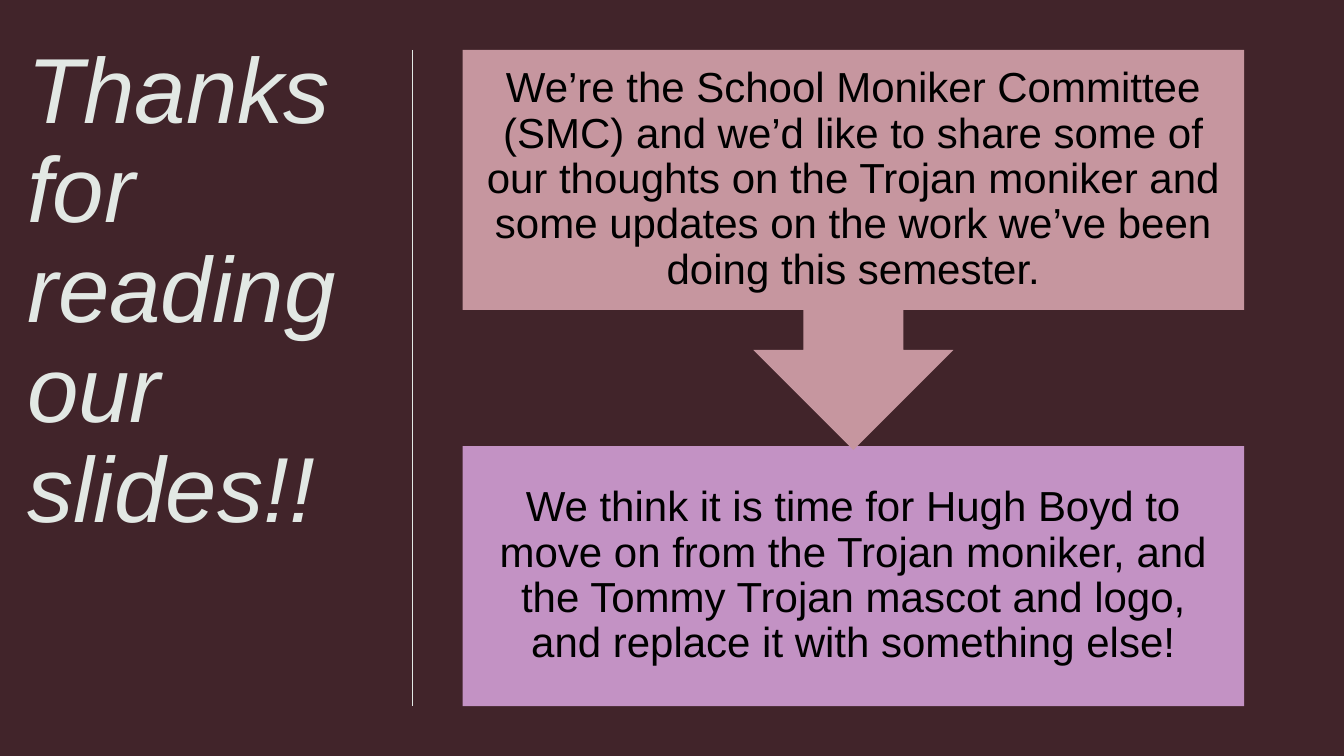
"""Build the closing slide of the School Moniker Committee deck."""
from lxml.etree import SubElement
from pptx import Presentation
from pptx.dml.color import RGBColor
from pptx.enum.shapes import MSO_CONNECTOR, MSO_SHAPE
from pptx.enum.text import MSO_ANCHOR, PP_ALIGN
from pptx.oxml.ns import qn
from pptx.util import Inches, Pt

WIDTH, HEIGHT = 13.33, 7.5
FONT = "Arial"
BACKGROUND, PALE, ROSE, LILAC, BLACK = "41242A", "E2E8E4", "C6969F", "C392C4", "000000"
TITLE = "Thanks for reading our slides!!"
INTRO = (
    "We’re the School Moniker Committee (SMC) and we’d like to share some of our "
    "thoughts on the Trojan moniker and some updates on the work we’ve been doing "
    "this semester."
)
PROPOSAL = (
    "We think it is time for Hugh Boyd to move on from the Trojan moniker, and the "
    "Tommy Trojan mascot and logo, and replace it with something else!"
)
PANEL_LEFT, PANEL_WIDTH = 34.43, 58.14
PANEL_TOP, PANEL_BOTTOM = 6.6, 93.4
PANEL_HEIGHT, CALLOUT_HEIGHT = 34.4, 52.93


def color(value):
    """Turn a hex string into a colour."""
    return RGBColor.from_string(value)


def across(percent):
    """Give a share of the slide's width."""
    return Inches(WIDTH * percent / 100)


def down(percent):
    """Give a share of the slide's height."""
    return Inches(HEIGHT * percent / 100)


def box(left, top, width, height):
    """Give a frame in percent of the slide."""
    return across(left), down(top), across(width), down(height)


def write(tf, text, size, ink, inset, align, italic=False):
    """Fill a text frame with one styled paragraph."""
    tf.word_wrap = True
    tf.margin_left = tf.margin_right = tf.margin_top = tf.margin_bottom = Inches(inset)
    p = tf.paragraphs[0]
    p.alignment = align
    p.line_spacing = 0.9
    r = p.add_run()
    r.text = text
    r.font.name = FONT
    r.font.size = Pt(size)
    r.font.italic = italic
    r.font.color.rgb = color(ink)


def add_title(s, text):
    """Add the large italic title on the left."""
    tf = s.shapes.add_textbox(*box(2.03, 5.73, 27.16, 86.93)).text_frame
    tf.vertical_anchor = MSO_ANCHOR.TOP
    write(tf, text, 66, PALE, 0, PP_ALIGN.LEFT, italic=True)


def add_divider(s, left, top, bottom):
    """Add the thin upright line beside the title."""
    line = s.shapes.add_connector(
        MSO_CONNECTOR.STRAIGHT, across(left), down(top), across(left), down(bottom)
    )
    line.line.color.rgb = color(PALE)
    line.line.width = Pt(0.75)
    SubElement(line._element.spPr, qn("a:effectLst"))


def add_panel(s, kind, top, height, fill, text):
    """Add a filled panel with centred text."""
    sp = s.shapes.add_shape(kind, *box(PANEL_LEFT, top, PANEL_WIDTH, height))
    sp.shadow.inherit = False
    sp.fill.solid()
    sp.fill.fore_color.rgb = color(fill)
    sp.line.fill.background()
    sp.text_frame.vertical_anchor = MSO_ANCHOR.MIDDLE
    write(sp.text_frame, text, 30, BLACK, 0.23, PP_ALIGN.CENTER)


def main():
    """Build and save the slide."""
    prs = Presentation()
    prs.slide_width, prs.slide_height = Inches(WIDTH), Inches(HEIGHT)
    s = prs.slides.add_slide(prs.slide_layouts[6])
    s.background.fill.solid()
    s.background.fill.fore_color.rgb = color(BACKGROUND)
    add_title(s, TITLE)
    add_divider(s, 30.68, PANEL_TOP, PANEL_BOTTOM)
    add_panel(s, MSO_SHAPE.RECTANGLE, PANEL_BOTTOM - PANEL_HEIGHT, PANEL_HEIGHT, LILAC, PROPOSAL)
    add_panel(s, MSO_SHAPE.DOWN_ARROW_CALLOUT, PANEL_TOP, CALLOUT_HEIGHT, ROSE, INTRO)
    prs.save("out.pptx")


if __name__ == "__main__":
    main()
